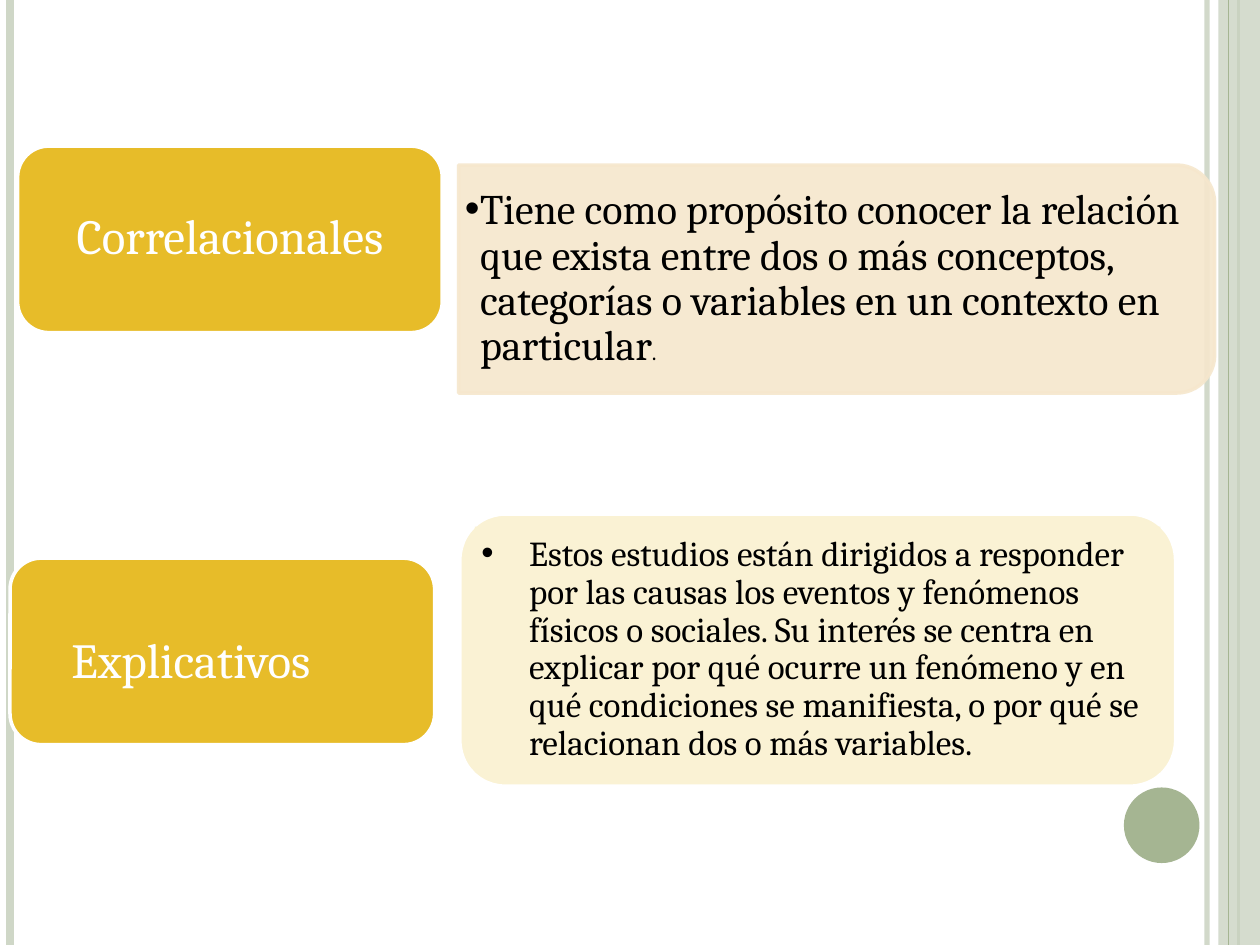
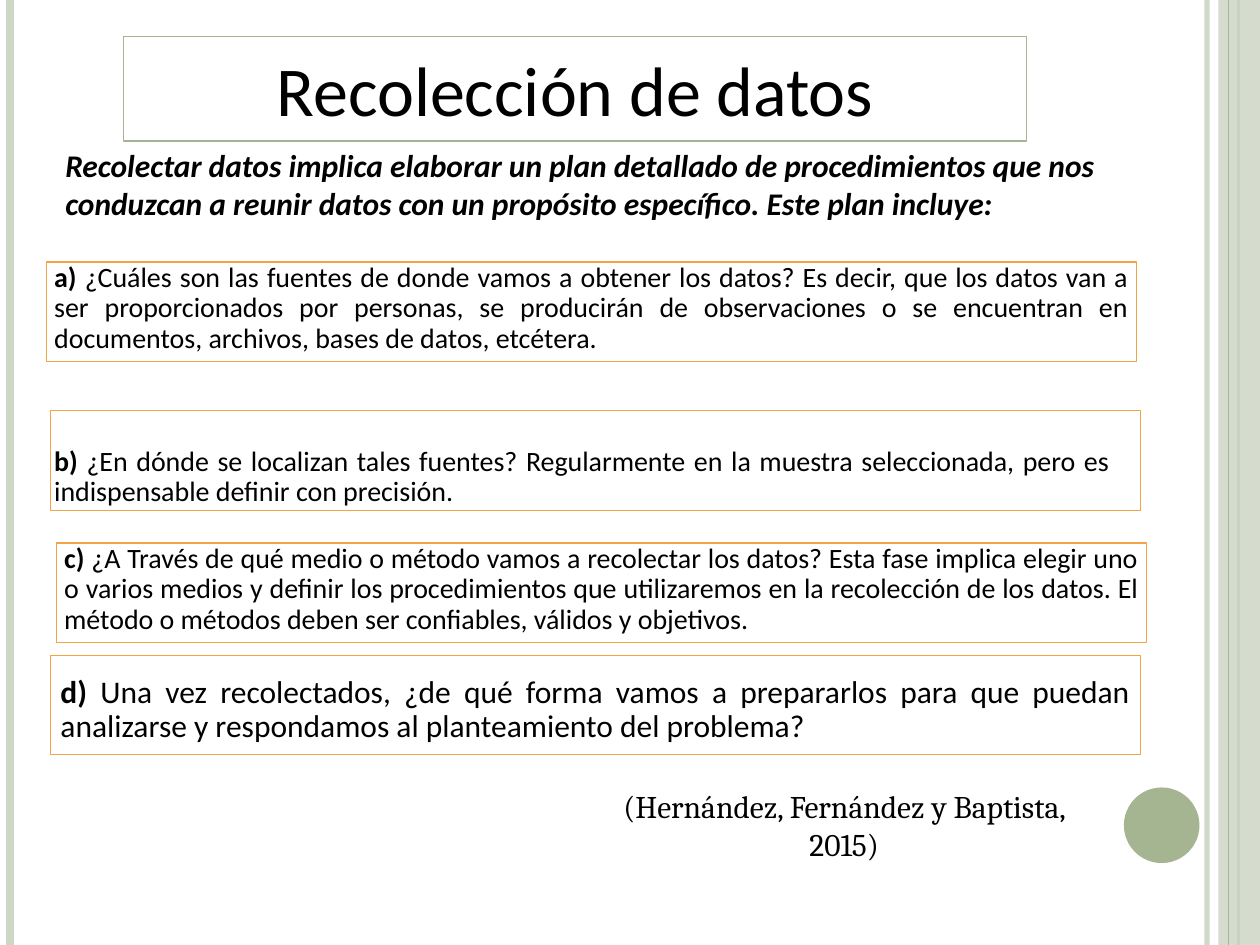
from lxml import etree
from pptx import Presentation
from pptx.dml.color import RGBColor
from pptx.enum.shapes import MSO_CONNECTOR, MSO_SHAPE
from pptx.enum.text import MSO_ANCHOR as Anchor, PP_ALIGN as Align
from pptx.oxml.ns import qn
from pptx.util import Inches, Pt

WHITE = RGBColor(0xFF, 0xFF, 0xFF)
BLACK = RGBColor(0, 0, 0)
SAGE = RGBColor(0xA5, 0xB5, 0x92)
PALE_SAGE = RGBColor(0xCF, 0xD7, 0xC7)
GOLD = RGBColor(0xE7, 0xBC, 0x29)
PALE_GOLD = RGBColor(0xFA, 0xF2, 0xD4)
PEACH = RGBColor(0xF6, 0xE7, 0xCD)
ORANGE = RGBColor(0xF3, 0xA4, 0x47)
HEADING_FONT = "Cambria"
BODY_FONT = "Calibri"
SLIDE_WIDTH, SLIDE_HEIGHT = 10, 7.5
DEFAULT_INSETS = (0.1, 0.05)


def set_opacity(color_format_parent, percent):
    for color in color_format_parent.iter(qn("a:srgbClr")):
        etree.SubElement(color, qn("a:alpha"), val=str(percent * 1000))


def add_shape(slide, kind, box, fill=None, line=None, width=0.75):
    shape = slide.shapes.add_shape(kind, *map(Inches, box))
    shape.shadow.inherit = False
    if fill is None:
        shape.fill.background()
    else:
        shape.fill.solid()
        shape.fill.fore_color.rgb = fill
    if line is None:
        shape.line.fill.background()
    else:
        shape.line.color.rgb = line
        shape.line.width = Pt(width)
    return shape


def add_text_box(slide, box):
    return slide.shapes.add_textbox(*map(Inches, box))


def write_text(shape, parts, size, font, color=BLACK, align=Align.LEFT,
               anchor=Anchor.MIDDLE, insets=DEFAULT_INSETS, spacing=1.0):
    frame = shape.text_frame
    frame.word_wrap = True
    frame.vertical_anchor = anchor
    frame.margin_left = frame.margin_right = Inches(insets[0])
    frame.margin_top = frame.margin_bottom = Inches(insets[1])
    paragraph = frame.paragraphs[0]
    paragraph.alignment = align
    paragraph.line_spacing = spacing
    for part in parts:
        run = paragraph.add_run()
        run.text = part
        run.font.size = Pt(size)
        run.font.name = font
        run.font.color.rgb = color
    return paragraph


def add_bullet(paragraph, indent):
    properties = paragraph._p.get_or_add_pPr()
    properties.set("marL", str(Inches(indent)))
    properties.set("indent", str(-Inches(indent)))
    etree.SubElement(properties, qn("a:buFont"), typeface="Arial")
    etree.SubElement(properties, qn("a:buChar"), char="•")


def add_vertical_rule(slide, x, color, width, opacity=100):
    rule = slide.shapes.add_connector(
        MSO_CONNECTOR.STRAIGHT, Inches(x), 0, Inches(x), Inches(SLIDE_HEIGHT))
    rule.line.color.rgb = color
    rule.line.width = Pt(width)
    etree.SubElement(rule._element.spPr, qn("a:effectLst"))
    if opacity < 100:
        set_opacity(rule._element.spPr, opacity)


def add_frame(slide):
    add_vertical_rule(slide, 9.58, PALE_SAGE, 3, 93)
    add_vertical_rule(slide, 0.08, PALE_SAGE, 4.5)
    add_vertical_rule(slide, 9.83, SAGE, 1.5)
    band = add_shape(slide, MSO_SHAPE.RECTANGLE,
                     (9.67, 0, SLIDE_WIDTH - 9.67, SLIDE_HEIGHT), PALE_SAGE)
    set_opacity(band._element.spPr, 87)
    add_vertical_rule(slide, 9.75, SAGE, 0.75)
    add_shape(slide, MSO_SHAPE.OVAL, (8.92, 6.25, 0.6, 0.6), SAGE)


def add_study_label(slide, left, top, text, text_shift):
    add_shape(slide, MSO_SHAPE.ROUNDED_RECTANGLE, (left, top, 3.37, 1.48), GOLD, WHITE, 2)
    label = add_text_box(slide, (left + text_shift[0], top + text_shift[1], 3.23, 1.33))
    write_text(label, [text], 28, HEADING_FONT, WHITE, Align.CENTER,
               insets=(0.12, 0.06), spacing=0.9)


def add_tab_description(slide, left, top, width, height, text):
    center_x, center_y = left + width / 2, top + height / 2
    tab = add_shape(slide, MSO_SHAPE.ROUND_2_SAME_RECTANGLE,
                    (center_x - height / 2, center_y - width / 2, height, width),
                    PEACH, PEACH, 2)
    tab.rotation = 90
    set_opacity(tab._element.spPr, 90)
    description = add_text_box(slide, (left, top + 0.09, width - 0.06, height - 0.18))
    paragraph = write_text(description, [text, "."], 24, HEADING_FONT,
                           insets=(0.05, 0.03), spacing=0.9)
    paragraph.runs[-1].font.size = Pt(13)
    add_bullet(paragraph, 0.12)


def add_card_description(slide, left, top, width, height, text):
    add_shape(slide, MSO_SHAPE.ROUNDED_RECTANGLE, (left, top, width, height),
              PALE_GOLD, WHITE, 2)
    description = add_shape(slide, MSO_SHAPE.RECTANGLE,
                            (left + 0.12, top + 0.1, width - 0.24, height - 0.21), PALE_GOLD)
    paragraph = write_text(description, [text], 20, HEADING_FONT,
                           insets=(0.05, 0.03), spacing=0.9)
    add_bullet(paragraph, 0.38)


def build_study_types(slide):
    add_frame(slide)
    add_study_label(slide, 0.14, 1.16, "Correlacionales", (0.07, 0.07))
    add_tab_description(
        slide, 3.64, 1.31, 6, 1.81,
        "Tiene como propósito conocer la relación que exista entre dos o más conceptos, "
        "categorías o variables en un contexto en particular")
    add_study_label(slide, 0.08, 4.43, "Explicativos", (-0.18, 0.16))
    add_card_description(
        slide, 3.65, 4.08, 5.68, 2.16,
        "Estos estudios están dirigidos a responder por las causas los eventos y fenómenos "
        "físicos o sociales. Su interés se centra en explicar por qué ocurre un fenómeno y en "
        "qué condiciones se manifiesta, o por qué se relacionan dos o más variables.")


def add_question(slide, left, top, letter, text, size=16, inset=0.06, text_box=None):
    holder = add_shape(slide, MSO_SHAPE.RECTANGLE, (left, top, 8.65, 0.79), line=ORANGE)
    if text_box:
        holder = add_text_box(slide, text_box)
    paragraph = write_text(holder, [f"{letter}) ", text], size, BODY_FONT,
                           align=Align.JUSTIFY, anchor=Anchor.BOTTOM,
                           insets=(inset, inset), spacing=0.9)
    paragraph.runs[0].font.bold = True


def build_data_collection(slide):
    add_frame(slide)
    title = add_shape(slide, MSO_SHAPE.RECTANGLE, (0.98, 0.29, 7.17, 0.83), line=SAGE)
    write_text(title, ["Recolección de datos"], 40, BODY_FONT, align=Align.CENTER)
    introduction = write_text(
        add_text_box(slide, (0.42, 1.11, 8.9, 0.71)),
        ["Recolectar datos implica elaborar un plan detallado de procedimientos que nos "
         "conduzcan a reunir datos con un propósito específico. Este plan incluye:"],
        18, BODY_FONT, anchor=Anchor.TOP)
    introduction.runs[0].font.bold = True
    introduction.runs[0].font.italic = True
    add_question(
        slide, 0.37, 2.08, "a",
        "¿Cuáles son las fuentes de donde vamos a obtener los datos? Es decir, que los datos "
        "van a ser proporcionados por personas, se producirán de observaciones o se "
        "encuentran en documentos, archivos, bases de datos, etcétera.")
    add_question(
        slide, 0.4, 3.26, "b",
        "¿En dónde se localizan tales fuentes? Regularmente en la muestra seleccionada, pero "
        "es indispensable definir con precisión.", text_box=(0.37, 3.3, 8.5, 0.79))
    add_question(
        slide, 0.45, 4.31, "c",
        "¿A Través de qué medio o método vamos a recolectar los datos? Esta fase implica "
        "elegir uno o varios medios y definir los procedimientos que utilizaremos en la "
        "recolección de los datos. El método o métodos deben ser confiables, válidos y "
        "objetivos.")
    add_question(
        slide, 0.4, 5.2, "d",
        "Una vez recolectados, ¿de qué forma vamos a prepararlos para que puedan analizarse y "
        "respondamos al planteamiento del problema?", 18, 0.08)
    citation = add_shape(slide, MSO_SHAPE.RECTANGLE, (4.69, 6.19, 4.02, 0.71),
                         line=WHITE, width=2)
    write_text(citation, ["(Hernández, Fernández y Baptista, 2015)"], 18,
               HEADING_FONT, align=Align.CENTER)


def main():
    presentation = Presentation()
    presentation.slide_width = Inches(SLIDE_WIDTH)
    presentation.slide_height = Inches(SLIDE_HEIGHT)
    blank = presentation.slide_layouts[6]
    for build in (build_study_types, build_data_collection):
        build(presentation.slides.add_slide(blank))
    presentation.save("out.pptx")


if __name__ == "__main__":
    main()
